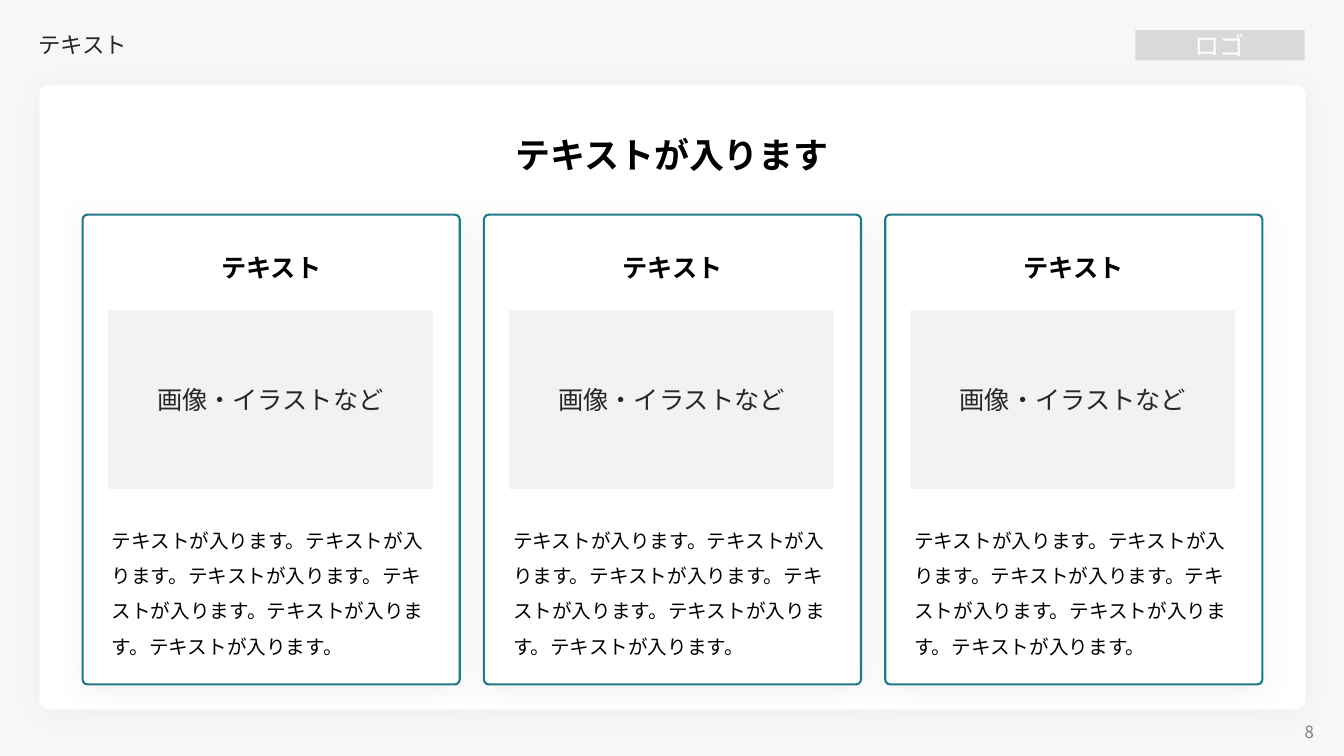
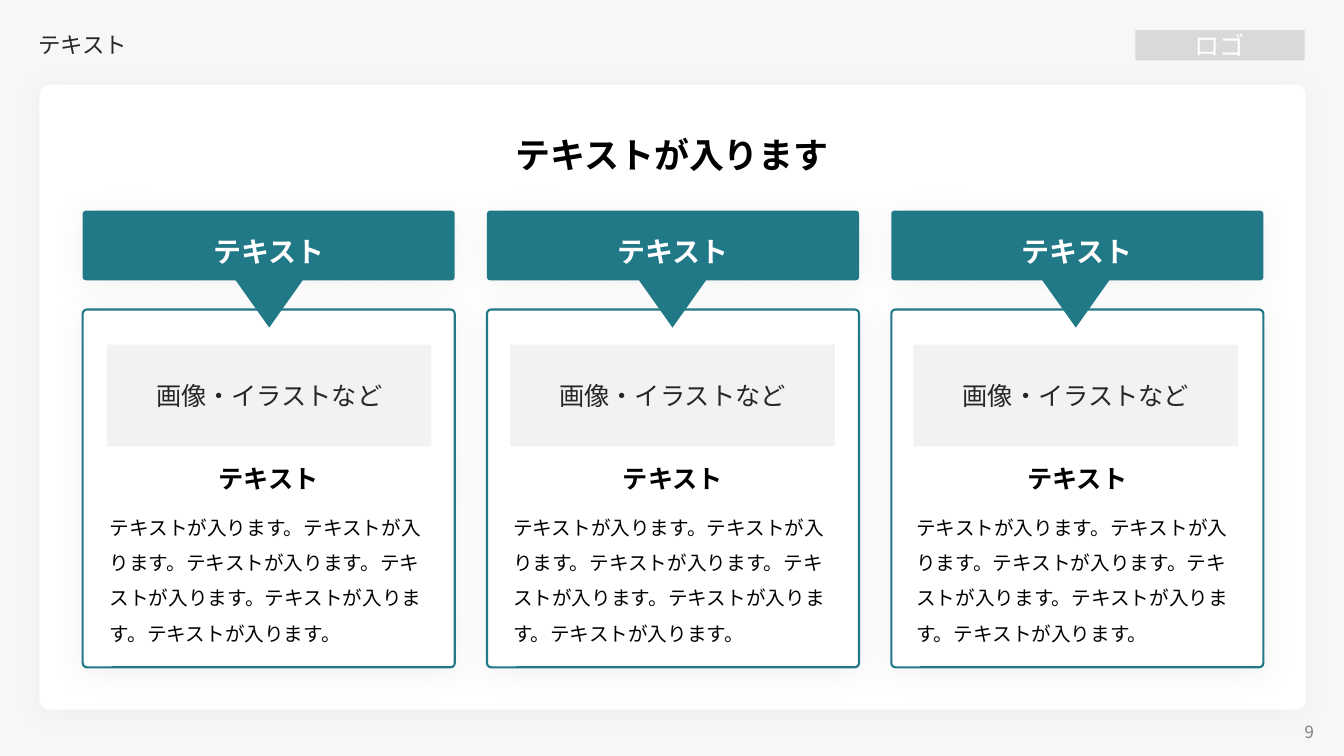
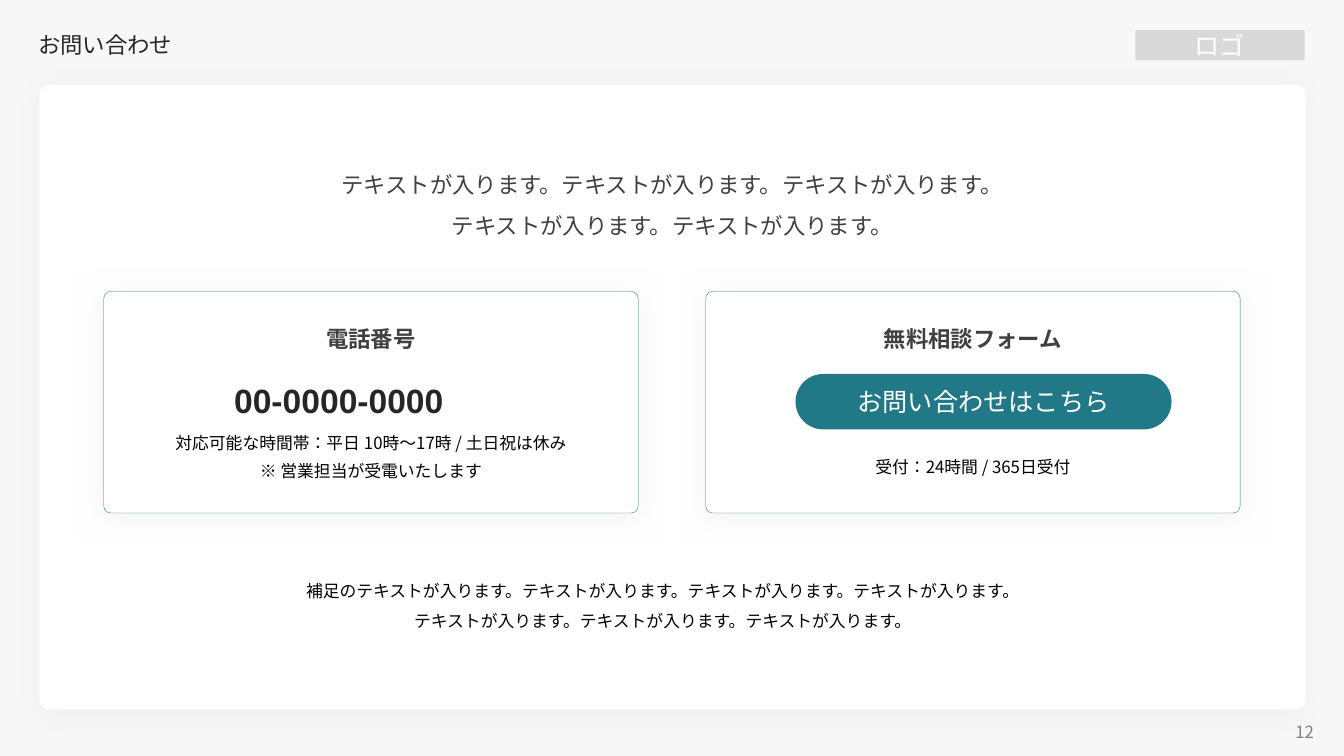
from lxml import etree
from pptx import Presentation
from pptx.dml.color import RGBColor
from pptx.enum.lang import MSO_LANGUAGE_ID
from pptx.enum.shapes import MSO_SHAPE
from pptx.enum.text import MSO_ANCHOR, PP_ALIGN
from pptx.oxml.ns import qn
from pptx.util import Inches, Pt

TEAL = RGBColor(0x21, 0x78, 0x87)
WHITE = RGBColor(0xFF, 0xFF, 0xFF)
BLACK = RGBColor(0, 0, 0)
INK = RGBColor(0x26, 0x26, 0x26)
DARK_GRAY = RGBColor(0x40, 0x40, 0x40)
GRAY = RGBColor(0x80, 0x80, 0x80)
LOGO_GRAY = RGBColor(0xD9, 0xD9, 0xD9)
PALE_GRAY = RGBColor(0xF2, 0xF2, 0xF2)
PAGE_GRAY = RGBColor(0xF7, 0xF7, 0xF7)

JAPANESE_FONT = "Noto Sans CJK JP"
PANEL_SHADOW = (BLACK, 3)
CARD_SHADOW = (GRAY, 10)
CONTACT_SHADOW = (PALE_GRAY, 100)

HEADLINE = "テキストが入ります"
IMAGE_LABEL = "画像・イラストなど"
SENTENCE = "テキストが入ります。"
CARDS = [{"heading": "テキスト", "body": SENTENCE * 6}] * 3
STEPS = [{"banner": "テキスト", "heading": "テキスト", "body": SENTENCE * 6}] * 3

INTRO = [SENTENCE * 3, SENTENCE * 2]
SUPPLEMENT = ["補足の" + SENTENCE * 4, SENTENCE * 3]
PHONE = {
    "heading": "電話番号",
    "number": "00-0000-0000",
    "hours": "対応可能な時間帯：平日 10時～17時 / 土日祝は休み",
    "note": "※ 営業担当が受電いたします",
}
FORM = {
    "heading": "無料相談フォーム",
    "button": "お問い合わせはこちら",
    "hours": "受付：24時間 / 365日受付",
}


def write(shape, lines, size, color=BLACK, bold=False, align=PP_ALIGN.CENTER,
          anchor=MSO_ANCHOR.TOP, spacing=None, gap=None, font=JAPANESE_FONT):
    """Put one paragraph per line into the shape; gap is the space before and after."""
    frame = shape.text_frame
    frame.word_wrap = True
    frame.vertical_anchor = anchor
    frame.text = "\n".join([lines] if isinstance(lines, str) else lines)
    for paragraph in frame.paragraphs:
        paragraph.alignment = align
        if spacing:
            paragraph.line_spacing = spacing
        if gap:
            paragraph.space_before = paragraph.space_after = Pt(gap)
        for run in paragraph.runs:
            run.font.size = Pt(size)
            run.font.bold = bold
            run.font.color.rgb = color
            run.font.name = font
            run.font.language_id = MSO_LANGUAGE_ID.JAPANESE
            east_asian = etree.SubElement(run.font._element, qn("a:ea"))
            east_asian.set("typeface", font)


def add_text(slide, box, lines, size, **style):
    write(slide.shapes.add_textbox(*map(Inches, box)), lines, size, **style)


def add_box(slide, box, fill, kind=MSO_SHAPE.RECTANGLE, radius=None,
            line_width=None, shadow=None):
    shape = slide.shapes.add_shape(kind, *map(Inches, box))
    shape.shadow.inherit = False
    shape.fill.solid()
    shape.fill.fore_color.rgb = fill
    if radius is not None:
        shape.adjustments[0] = radius
    if line_width:
        shape.line.color.rgb = TEAL
        shape.line.width = Pt(line_width)
    else:
        shape.line.fill.background()
    if shadow:
        add_shadow(shape, *shadow)
    return shape


def add_shadow(shape, color, opacity):
    """Add a soft shadow below the shape; opacity is a percentage."""
    effects = shape._element.spPr.find(qn("a:effectLst"))
    outer = etree.SubElement(effects, qn("a:outerShdw"), blurRad=str(Pt(20)),
                             dist=str(Pt(3)), dir="5400000", algn="t", rotWithShape="0")
    shade = etree.SubElement(outer, qn("a:srgbClr"), val=str(color))
    etree.SubElement(shade, qn("a:alpha"), val=str(opacity * 1000))


def add_rounded(slide, box, fill, radius, **style):
    return add_box(slide, box, fill, MSO_SHAPE.ROUNDED_RECTANGLE, radius, **style)


def add_page(deck, title, number):
    slide = deck.slides.add_slide(deck.slide_layouts[6])
    slide.background.fill.solid()
    slide.background.fill.fore_color.rgb = PAGE_GRAY
    add_rounded(slide, (0.39, 0.84, 12.56, 6.2), WHITE, 0.017, shadow=PANEL_SHADOW)
    add_text(slide, (10.02, 7.14, 3.11, 0.24), str(number), 12, color=GRAY,
             align=PP_ALIGN.RIGHT, anchor=MSO_ANCHOR.MIDDLE)
    logo = add_box(slide, (11.26, 0.3, 1.68, 0.3), LOGO_GRAY)
    write(logo, "ロゴ", 18, color=WHITE, anchor=MSO_ANCHOR.MIDDLE)
    add_text(slide, (0.28, 0.25, 10, 0.41), title, 16, color=INK, spacing=0.9,
             align=PP_ALIGN.LEFT, anchor=MSO_ANCHOR.MIDDLE)
    return slide


def add_headline(slide):
    add_text(slide, (1.19, 1.28, 10.95, 0.52), HEADLINE, 25, bold=True)


def add_image_area(slide, left, top, height):
    area = add_box(slide, (left, top, 3.22, height), PALE_GRAY)
    write(area, IMAGE_LABEL, 18, color=INK, anchor=MSO_ANCHOR.MIDDLE, font="Roboto")


def add_body(slide, left, top, text):
    add_text(slide, (left, top, 3.43, 1.49), text, 14, spacing=1.5, align=PP_ALIGN.LEFT)


def build_cards(deck):
    slide = add_page(deck, "テキスト", 8)
    add_headline(slide)
    width, pitch = 3.74, 3.98
    for column, card in enumerate(CARDS):
        left = 0.82 + column * pitch
        add_rounded(slide, (left, 2.13, width, 4.66), WHITE, 0.013,
                    line_width=1.5, shadow=CARD_SHADOW)
        add_text(slide, (left, 2.45, width, 0.4), card["heading"], 18, bold=True, gap=4)
        add_image_area(slide, left + 0.25, 3.08, 1.77)
        add_body(slide, left + 0.19, 5.08, card["body"])


def build_steps(deck):
    slide = add_page(deck, "テキスト", 9)
    add_headline(slide)
    width, pitch, inner_pitch = 3.69, 4.01, 4
    for column, step in enumerate(STEPS):
        left = 0.82 + column * pitch
        shift = column * inner_pitch
        add_rounded(slide, (left, 2.09, width, 0.69), TEAL, 0.045, shadow=CARD_SHADOW)
        add_rounded(slide, (left, 3.07, width, 3.55), WHITE, 0.012,
                    line_width=1.5, shadow=CARD_SHADOW)
        add_text(slide, (left, 2.28, width, 0.44), step["banner"], 20,
                 color=WHITE, bold=True, gap=4)
        pointer = add_box(slide, (2.33 + shift, 2.77, 0.68, 0.48), TEAL,
                          MSO_SHAPE.ISOSCELES_TRIANGLE)
        pointer.rotation = 180
        add_image_area(slide, 1.06 + shift, 3.42, 1.01)
        add_text(slide, (left, 4.55, width, 0.4), step["heading"], 18, bold=True)
        add_body(slide, 0.99 + shift, 4.95, step["body"])


def build_contact(deck):
    slide = add_page(deck, "お問い合わせ", 12)
    add_text(slide, (0.64, 1.52, 12.06, 0.87), INTRO, 16, color=DARK_GRAY, spacing=1.5)
    width, phone_left, form_left = 5.3, 1.03, 7
    for left, contact in ((phone_left, PHONE), (form_left, FORM)):
        add_rounded(slide, (left, 2.89, width, 2.2), WHITE, 0.032,
                    line_width=0.25, shadow=CONTACT_SHADOW)
        add_text(slide, (left, 3.18, width, 0.37), contact["heading"], 16,
                 color=DARK_GRAY, bold=True, gap=4)
    add_text(slide, (1.89, 3.52, 2.94, 0.64), PHONE["number"], 24, color=INK,
             bold=True, spacing=1.5, font="Arial")
    button = add_rounded(slide, (7.89, 3.71, 3.73, 0.55), TEAL, 0.5)
    write(button, FORM["button"], 18, color=WHITE, anchor=MSO_ANCHOR.MIDDLE)
    for left, top, detail in ((phone_left, 4.24, PHONE["hours"]),
                              (phone_left, 4.52, PHONE["note"]),
                              (form_left, 4.48, FORM["hours"])):
        add_text(slide, (left, top, width, 0.3), detail, 12)
    add_text(slide, (0.45, 5.61, 12.25, 0.68), SUPPLEMENT, 12, spacing=1.5)


def main():
    deck = Presentation()
    deck.slide_width, deck.slide_height = Inches(13.33), Inches(7.5)
    build_cards(deck)
    build_steps(deck)
    build_contact(deck)
    deck.save("out.pptx")


if __name__ == "__main__":
    main()
